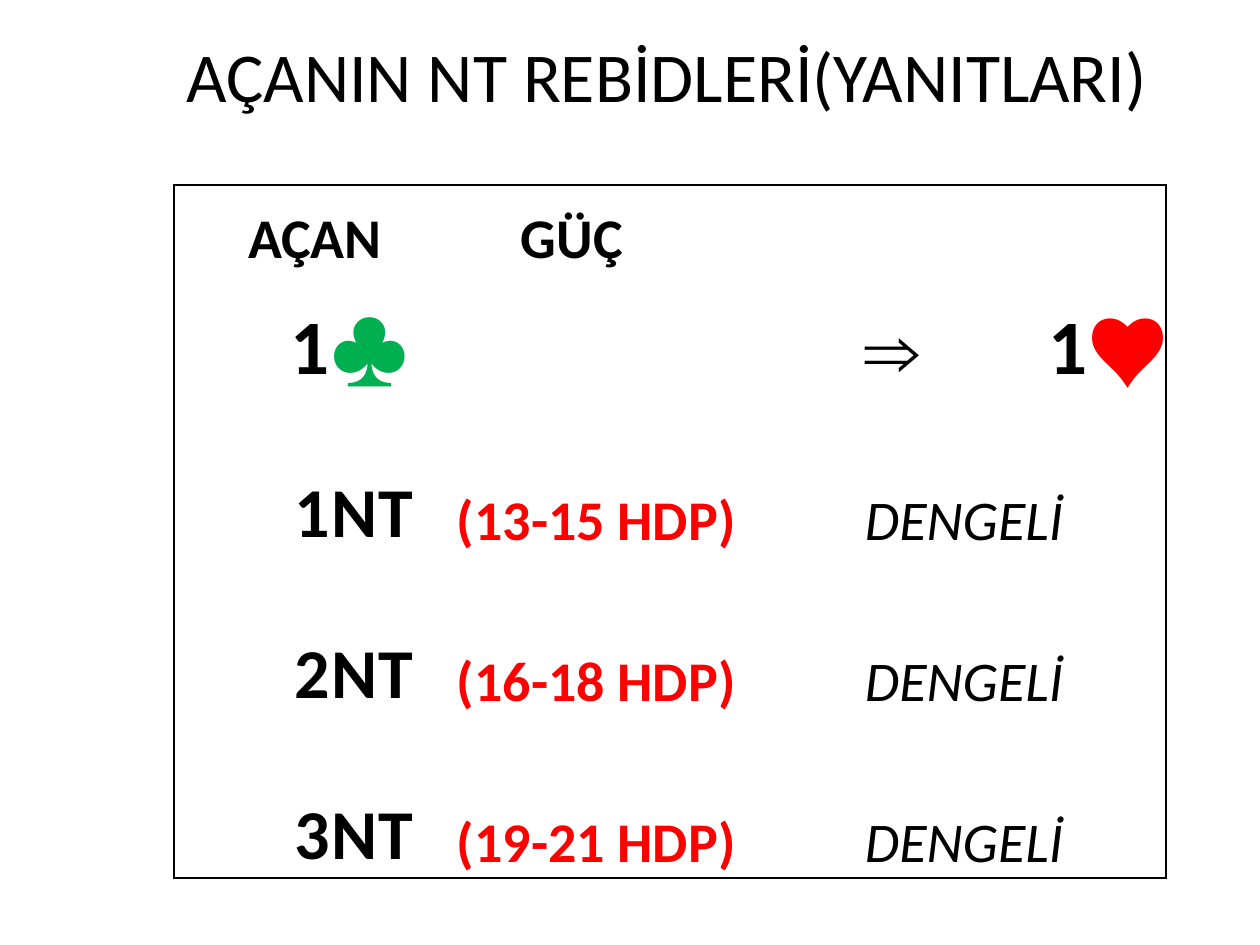
"""Builds the bridge slide on the opener's NT rebids."""
import dataclasses

import lxml.etree
import pptx
import pptx.dml.color
import pptx.enum.text
import pptx.oxml.ns
import pptx.util

ALIGN = pptx.enum.text.PP_ALIGN
ANCHOR = pptx.enum.text.MSO_ANCHOR


@dataclasses.dataclass(frozen=True)
class Theme:
    black: str = "000000"
    red: str = "FF0000"
    green: str = "00B050"
    font: str = "Calibri"
    sign: str = "Arial"
    title: int = 40
    head: int = 32
    suit: int = 44
    bid: int = 40
    note: int = 32
    line: int = 1


theme = Theme()


def px(count):
    return pptx.util.Emu(round(count * 914400 / 126))


def write(para, text, size, color=theme.black, bold=True, slant=False, font=theme.font):
    run = para.add_run()
    run.text = text
    run.font.name = font
    run.font.size = pptx.util.Pt(size)
    run.font.bold = bold
    run.font.italic = slant
    run.font.color.rgb = pptx.dml.color.RGBColor.from_string(color)


deck = pptx.Presentation()
deck.slide_width, deck.slide_height = px(1260), px(945)
slide = deck.slides.add_slide(deck.slide_layouts[5])

title = slide.shapes.title
title.left, title.top, title.width, title.height = px(174), px(26), px(997), px(97)
frame = title.text_frame
frame.word_wrap = False
frame.auto_size = pptx.enum.text.MSO_AUTO_SIZE.NONE
frame.vertical_anchor = ANCHOR.TOP
frame.paragraphs[0].alignment = ALIGN.LEFT
write(frame.paragraphs[0], "AÇANIN NT REBİDLERİ(YANITLARI)", theme.title, bold=False)

widths = [157, 125, 408, 158, 67, 77]
heights = [107, 103, 161, 161, 161]
last_row, last_col = len(heights) - 1, len(widths) - 1
holder = slide.shapes.add_table(
    len(heights), len(widths), px(174), px(185), px(sum(widths)), px(sum(heights))
)
table = holder.table
table.first_row = table.horz_banding = False
for col, width in zip(table.columns, widths):
    col.width = px(width)
for row, height in zip(table.rows, heights):
    row.height = px(height)

for r in range(len(heights)):
    for c in range(len(widths)):
        cell = table.cell(r, c)
        cell.margin_left = cell.margin_right = cell.margin_top = px(1)
        cell.margin_bottom = 0
        cell.vertical_anchor = ANCHOR.BOTTOM if r else ANCHOR.MIDDLE
        props = cell._tc.get_or_add_tcPr()
        edges = {"L": c == 0, "R": c == last_col, "T": r == 0, "B": r == last_row}
        for side, drawn in edges.items():
            line = lxml.etree.SubElement(props, pptx.oxml.ns.qn(f"a:ln{side}"))
            line.set("w", str(pptx.util.Pt(theme.line)))
            kind = "a:solidFill" if drawn else "a:noFill"
            fill = lxml.etree.SubElement(line, pptx.oxml.ns.qn(kind))
            if drawn:
                tint = lxml.etree.SubElement(fill, pptx.oxml.ns.qn("a:srgbClr"))
                tint.set("val", theme.black)
        cell.fill.background()

table.cell(0, 0).merge(table.cell(0, 1))
table.cell(0, 2).margin_left = px(65)
items = [
    (0, 0, ALIGN.CENTER, "AÇAN", {"size": theme.head}),
    (0, 2, ALIGN.LEFT, "GÜÇ", {"size": theme.head}),
    (1, 0, ALIGN.RIGHT, "1", {"size": theme.suit}),
    (1, 1, ALIGN.LEFT, "♣", {"size": theme.suit, "color": theme.green}),
    (1, 3, ALIGN.LEFT, "⇒", {"size": theme.suit, "font": theme.sign}),
    (1, 4, ALIGN.RIGHT, "1", {"size": theme.suit}),
    (1, 5, ALIGN.LEFT, "♥", {"size": theme.suit, "color": theme.red}),
]
for level, span in enumerate(["13-15", "16-18", "19-21"], start=1):
    r = level + 1
    table.cell(r, 3).merge(table.cell(r, 4))
    items += [
        (r, 0, ALIGN.RIGHT, str(level), {"size": theme.bid}),
        (r, 1, ALIGN.LEFT, "NT", {"size": theme.bid}),
        (r, 2, ALIGN.LEFT, f"({span} HDP)", {"size": theme.note, "color": theme.red}),
        (r, 3, ALIGN.LEFT, "DENGELİ", {"size": theme.note, "bold": False, "slant": True}),
    ]
for r, c, align, text, style in items:
    para = table.cell(r, c).text_frame.paragraphs[0]
    para.alignment = align
    write(para, text, **style)

deck.save("out.pptx")
